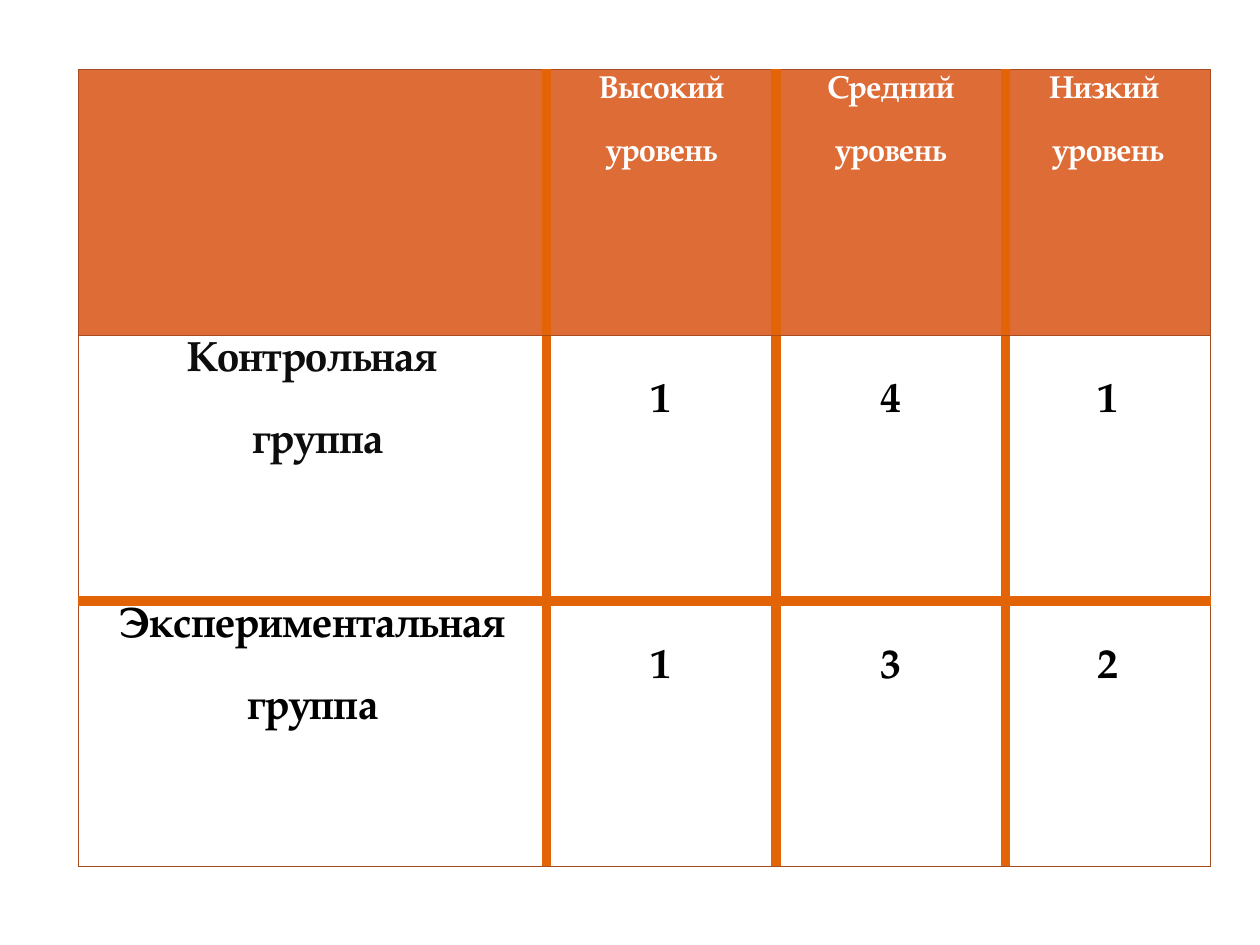
from pptx import Presentation
from pptx.dml.color import RGBColor
from pptx.enum.text import PP_ALIGN
from pptx.oxml.ns import qn
from pptx.util import Inches, Pt
from lxml import etree

CENTER = PP_ALIGN.CENTER
WHITE = RGBColor(0xFF, 0xFF, 0xFF)
BLACK = RGBColor(0, 0, 0)
CHARCOAL = RGBColor(0x0D, 0x0D, 0x0D)
HEADER_ORANGE = RGBColor(0xDE, 0x6C, 0x36)
FONT = "TeX Gyre Pagella"
THIN = (RGBColor(0xA7, 0x4C, 0x21), 0.75)
THICK = (RGBColor(0xE3, 0x64, 0x06), 6)

# Content: each cell is a list of its paragraphs
ROWS = [
    [[], ["Высокий", "уровень"], ["Средний", "уровень"], ["Низкий ", "уровень"]],
    [["Контрольная", " группа"], ["1"], ["4"], ["1"]],
    [["Экспериментальная", "группа"], ["1"], ["3"], ["2"]],
]
COLUMN_WIDTHS = [3.72, 1.82, 1.82, 1.63]
ROW_HEIGHT = 2.11
LEFT, TOP = 0.62, 0.55
LAST_ROW, LAST_COLUMN = len(ROWS) - 1, len(COLUMN_WIDTHS) - 1


def set_border(cell, side, border):
    color, width = border
    line = etree.SubElement(cell._tc.get_or_add_tcPr(), qn("a:" + side), w=str(Pt(width)))
    fill = etree.SubElement(line, qn("a:solidFill"))
    etree.SubElement(fill, qn("a:srgbClr"), val=str(color))


def write_lines(cell, lines, size, pitch, color):
    cell.text_frame.text = "\n".join(lines)
    for index, paragraph in enumerate(cell.text_frame.paragraphs):
        paragraph.alignment = CENTER
        paragraph.line_spacing = Pt(pitch)
        if index:
            paragraph.space_before = Pt(pitch)
        paragraph.font.size = Pt(size)
        for run in paragraph.runs:
            run.font.name = FONT
            run.font.size = Pt(size)
            run.font.bold = True
            run.font.color.rgb = color


prs = Presentation()
prs.slide_width, prs.slide_height = Inches(10), Inches(7.5)
slide = prs.slides.add_slide(prs.slide_layouts[6])

# Table grid
levels = slide.shapes.add_table(
    len(ROWS), len(COLUMN_WIDTHS), Inches(LEFT), Inches(TOP),
    Inches(sum(COLUMN_WIDTHS)), Inches(ROW_HEIGHT * len(ROWS))).table
for column, width in zip(levels.columns, COLUMN_WIDTHS):
    column.width = Inches(width)
for row in levels.rows:
    row.height = Inches(ROW_HEIGHT)

# Cells: thick rules between columns and between the two groups
for r, row in enumerate(ROWS):
    for c, lines in enumerate(row):
        cell = levels.cell(r, c)
        set_border(cell, "lnL", THICK if c > 0 else THIN)
        set_border(cell, "lnR", THICK if c < LAST_COLUMN else THIN)
        set_border(cell, "lnT", THICK if r == LAST_ROW else THIN)
        set_border(cell, "lnB", THICK if r == LAST_ROW - 1 else THIN)
        if r == 0:
            cell.fill.solid()
            cell.fill.fore_color.rgb = HEADER_ORANGE
            write_lines(cell, lines, 18, 18, WHITE)
        else:
            cell.fill.background()
            color = CHARCOAL if (r, c) == (1, 0) else BLACK
            write_lines(cell, lines, 24, 23.5, color)
            if c > 0:  # counts sit one line lower than the group names
                cell.margin_top = Inches(0.05) + Pt(23.5)

prs.save("out.pptx")
